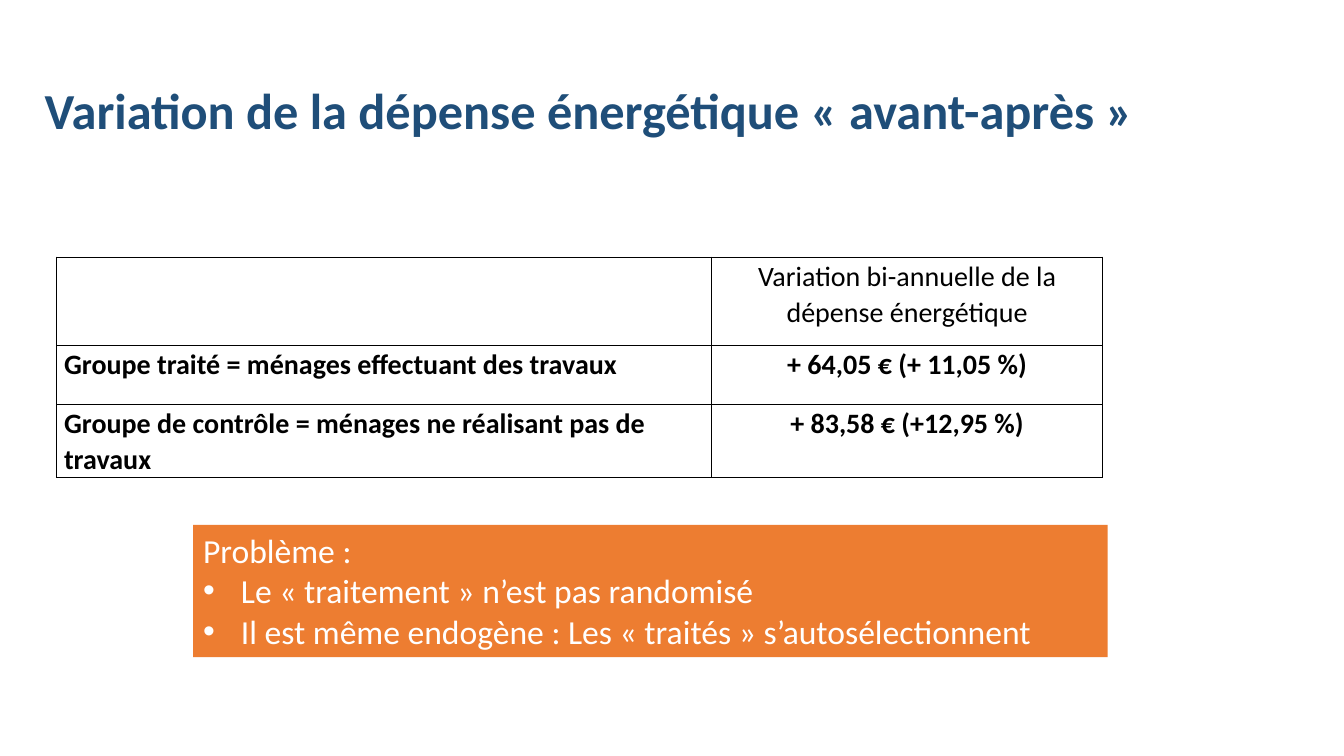
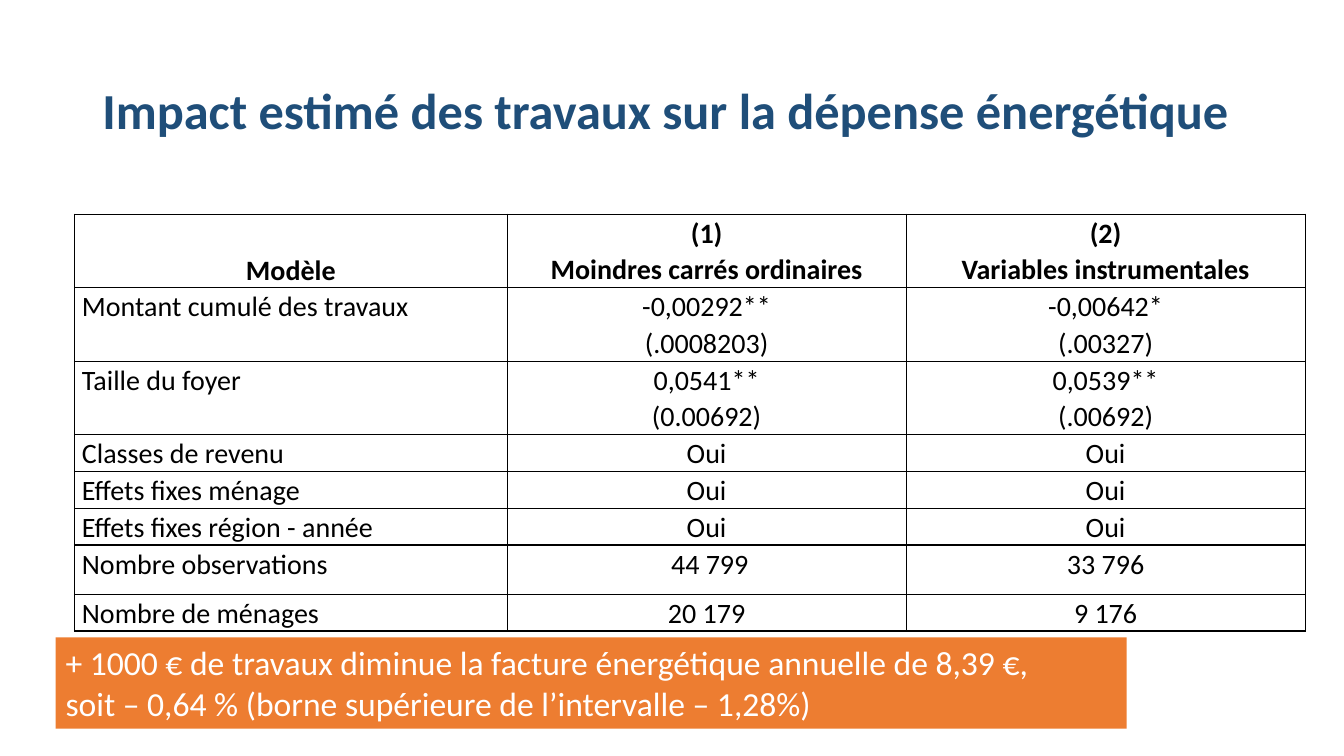
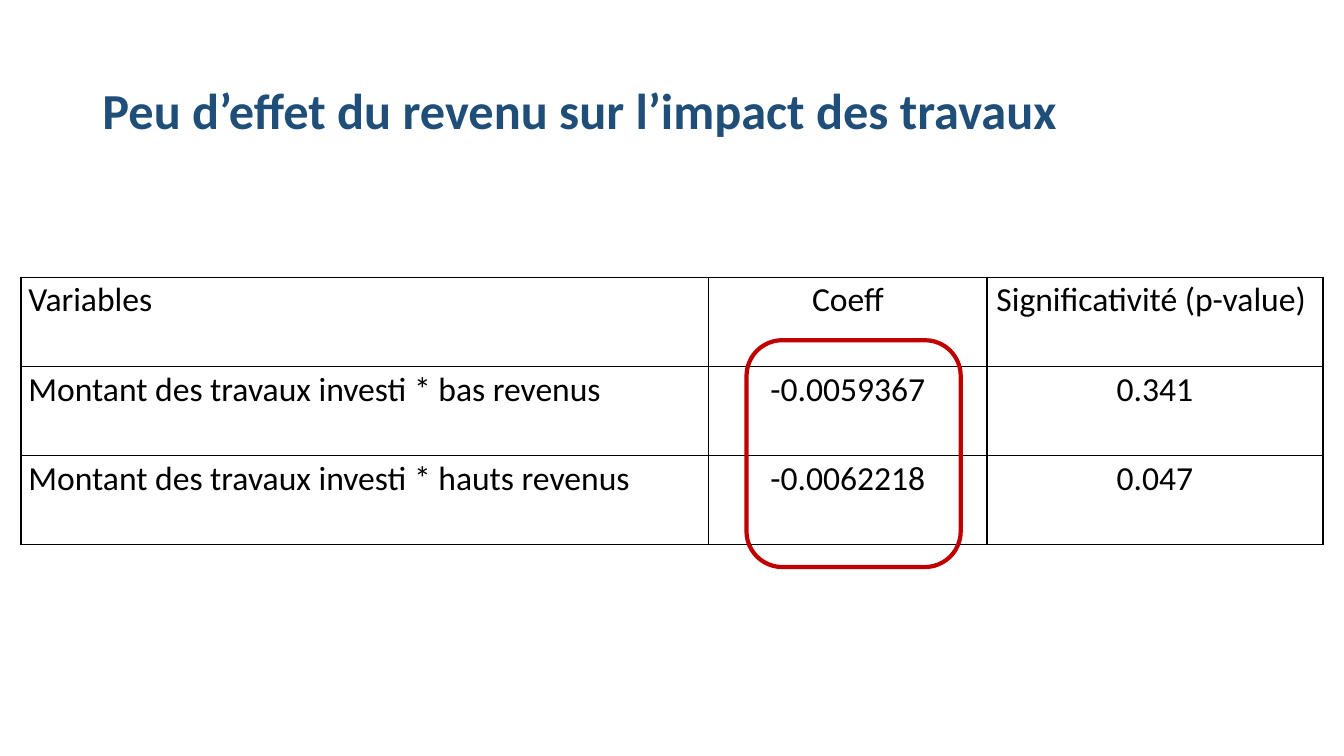
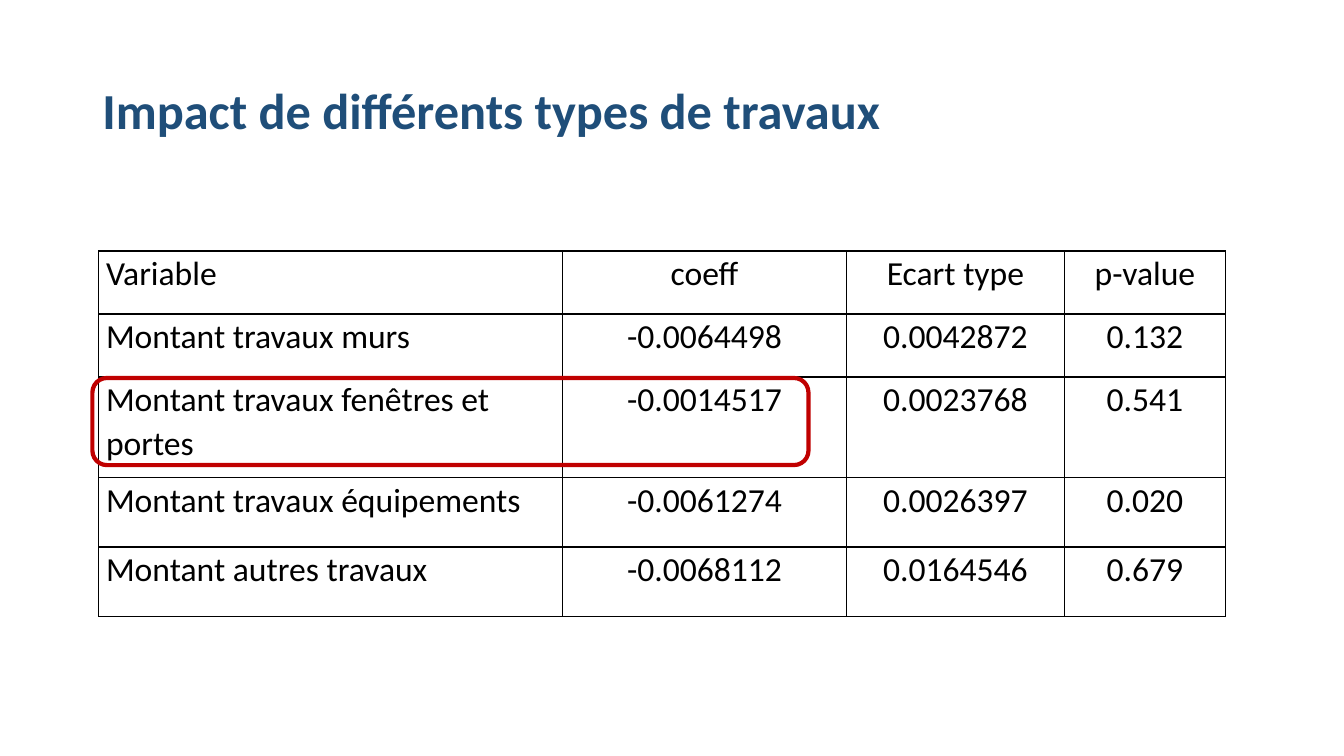
from lxml.etree import SubElement
from pptx import Presentation
from pptx.dml.color import RGBColor
from pptx.enum.shapes import MSO_SHAPE as Shape
from pptx.enum.text import MSO_ANCHOR as Anchor, MSO_AUTO_SIZE as AutoSize, PP_ALIGN as Align
from pptx.oxml.ns import qn
from pptx.util import Emu, Pt

NAVY = RGBColor(0x1F, 0x4E, 0x79)
ORANGE = RGBColor(0xED, 0x7D, 0x31)
RED = RGBColor(0xC0, 0x00, 0x00)
BLACK = RGBColor(0x00, 0x00, 0x00)
WHITE = RGBColor(0xFF, 0xFF, 0xFF)
FONT = "Calibri"
TITLE_BOX = (88, 38, 1104, 139)
WIDE_TITLE_BOX = (33, 38, 1208, 139)


def px(length):
    """Turn pixels, 96 to the inch, into EMU."""
    return Emu(length * 9525)


def add_bullet(para, indent=36):
    """Give a paragraph a hanging round bullet."""
    props = para._p.get_or_add_pPr()
    props.set("marL", str(px(indent)))
    props.set("indent", str(-px(indent)))
    SubElement(props, qn("a:buFont"), typeface="Arial")
    SubElement(props, qn("a:buChar"), char="•")


def write_text(frame, text, size, color=BLACK, bold=False, align=Align.LEFT,
               spacing=1.0, first_bullet=None):
    """Write each line as a paragraph, with bullets from line first_bullet on."""
    for index, line in enumerate(text.split("\n")):
        para = frame.add_paragraph() if index else frame.paragraphs[0]
        para.alignment = align
        para.line_spacing = spacing
        if first_bullet is not None and index >= first_bullet:
            add_bullet(para)
        span = para.add_run()
        span.text = line
        span.font.name = FONT
        span.font.size = Pt(size)
        span.font.bold = bold
        span.font.color.rgb = color


def add_page(deck, title, box=TITLE_BOX):
    """Add a slide with its title."""
    page = deck.slides.add_slide(deck.slide_layouts[5])
    holder = page.shapes.title
    holder.left, holder.top, holder.width, holder.height = map(px, box)
    frame = holder.text_frame
    frame.word_wrap = True
    frame.auto_size = AutoSize.NONE
    frame.vertical_anchor = Anchor.MIDDLE
    write_text(frame, title, 36, color=NAVY, bold=True, spacing=0.9)
    return page


def format_cell(cell):
    """Set the margins, black borders and empty fill of a cell."""
    cell.margin_left = cell.margin_right = px(7)
    cell.margin_top = cell.margin_bottom = 0
    props = cell._tc.get_or_add_tcPr()
    for side in ("a:lnL", "a:lnR", "a:lnT", "a:lnB"):
        border = SubElement(props, qn(side), w=str(Pt(1)))
        fill = SubElement(border, qn("a:solidFill"))
        SubElement(fill, qn("a:srgbClr"), val=str(BLACK))
    cell.fill.background()


def add_grid(page, corner, widths, heights, rows, size, bold_rows=()):
    """Add a bordered table with a left first column and centred others."""
    box = (*corner, sum(widths), sum(heights))
    table = page.shapes.add_table(len(rows), len(widths), *map(px, box)).table
    table.first_row = table.horz_banding = False
    for column, width in zip(table.columns, widths):
        column.width = px(width)
    for r, (height, texts) in enumerate(zip(heights, rows)):
        table.rows[r].height = px(height)
        for c, text in enumerate(texts):
            cell = table.cell(r, c)
            format_cell(cell)
            if text:
                write_text(cell.text_frame, text, size, bold=r in bold_rows,
                           align=Align.CENTER if c else Align.LEFT, spacing=1.07)
    return table


def add_banner(page, box, text, first_bullet=None):
    """Add an orange box that holds a conclusion."""
    banner = page.shapes.add_shape(Shape.RECTANGLE, *map(px, box))
    banner.shadow.inherit = False
    banner.fill.solid()
    banner.fill.fore_color.rgb = ORANGE
    banner.line.fill.background()
    frame = banner.text_frame
    frame.word_wrap = True
    frame.auto_size = AutoSize.SHAPE_TO_FIT_TEXT
    frame.vertical_anchor = Anchor.TOP
    write_text(frame, text, 24, color=WHITE, first_bullet=first_bullet)


def add_highlight(page, box):
    """Add a red rounded outline around some cells."""
    outline = page.shapes.add_shape(Shape.ROUNDED_RECTANGLE, *map(px, box))
    outline.shadow.inherit = False
    outline.fill.background()
    outline.line.color.rgb = RED
    outline.line.width = Pt(3)


def build_variation(deck):
    """Build the slide on spending before and after."""
    page = add_page(deck, "Variation de la dépense énergétique « avant-après »", WIDE_TITLE_BOX)
    add_grid(page, (54, 245), (624, 372), (84, 56, 70), [
        ("", "Variation bi-annuelle de la dépense énergétique"),
        ("Groupe traité = ménages effectuant des travaux", "+ 64,05 € (+ 11,05 %)"),
        ("Groupe de contrôle = ménages ne réalisant pas de travaux", "+ 83,58 € (+12,95 %)"),
    ], size=20, bold_rows=(1, 2))
    add_banner(page, (184, 500, 871, 126),
               "Problème :\n"
               "Le « traitement » n’est pas randomisé\n"
               "Il est même endogène : Les « traités » s’autosélectionnent", first_bullet=1)


def build_impact(deck):
    """Build the slide on the estimated impact."""
    page = add_page(deck, "Impact estimé des travaux sur la dépense énergétique")
    table = add_grid(page, (71, 204), (412, 380, 380), (70, 70, 70, 35, 35, 35, 47, 35), [
        ("Modèle", "(1)\nMoindres carrés ordinaires", "(2)\nVariables instrumentales"),
        ("Montant cumulé des travaux", "-0,00292**\n(.0008203)", "-0,00642*\n(.00327)"),
        ("Taille du foyer", "0,0541**\n(0.00692)", "0,0539**\n(.00692)"),
        ("Classes de revenu", "Oui", "Oui"),
        ("Effets fixes ménage", "Oui", "Oui"),
        ("Effets fixes région - année", "Oui", "Oui"),
        ("Nombre observations", " 44 799", "33 796"),
        ("Nombre de ménages", "20 179", "9 176"),
    ], size=20, bold_rows=(0,))
    model = table.cell(0, 0)
    model.vertical_anchor = Anchor.BOTTOM
    model.text_frame.paragraphs[0].alignment = Align.CENTER
    add_banner(page, (53, 607, 1020, 87),
               "+ 1000 € de travaux diminue la facture énergétique annuelle de 8,39 €,\n"
               "soit – 0,64 % (borne supérieure de l’intervalle – 1,28%)")


def build_income(deck):
    """Build the slide on the effect of income."""
    page = add_page(deck, "Peu d’effet du revenu sur l’impact des travaux")
    add_grid(page, (20, 264), (655, 265, 320), (85, 85, 85), [
        ("Variables", "Coeff", "Significativité (p-value) "),
        ("Montant des travaux investi * bas revenus", "-0.0059367", "0.341"),
        ("Montant des travaux investi * hauts revenus", "-0.0062218", "0.047"),
    ], size=24)
    add_highlight(page, (711, 324, 204, 216))


def build_work_types(deck):
    """Build the slide on the types of work."""
    page = add_page(deck, "Impact de différents types de travaux")
    add_grid(page, (94, 239), (442, 270, 208, 153), (60, 60, 96, 66, 66), [
        ("Variable", "coeff", "Ecart type", "p-value"),
        ("Montant travaux murs", "-0.0064498", "0.0042872", "0.132"),
        ("Montant travaux fenêtres et portes", "-0.0014517", "0.0023768", "0.541"),
        ("Montant travaux équipements", "-0.0061274", "0.0026397", "0.020"),
        ("Montant autres travaux", "-0.0068112", "0.0164546", "0.679"),
    ], size=24)
    add_highlight(page, (88, 360, 682, 83))


def main():
    """Build and save the deck."""
    deck = Presentation()
    deck.slide_width, deck.slide_height = px(1280), px(720)
    for build in (build_variation, build_impact, build_income, build_work_types):
        build(deck)
    deck.save("out.pptx")


if __name__ == "__main__":
    main()
